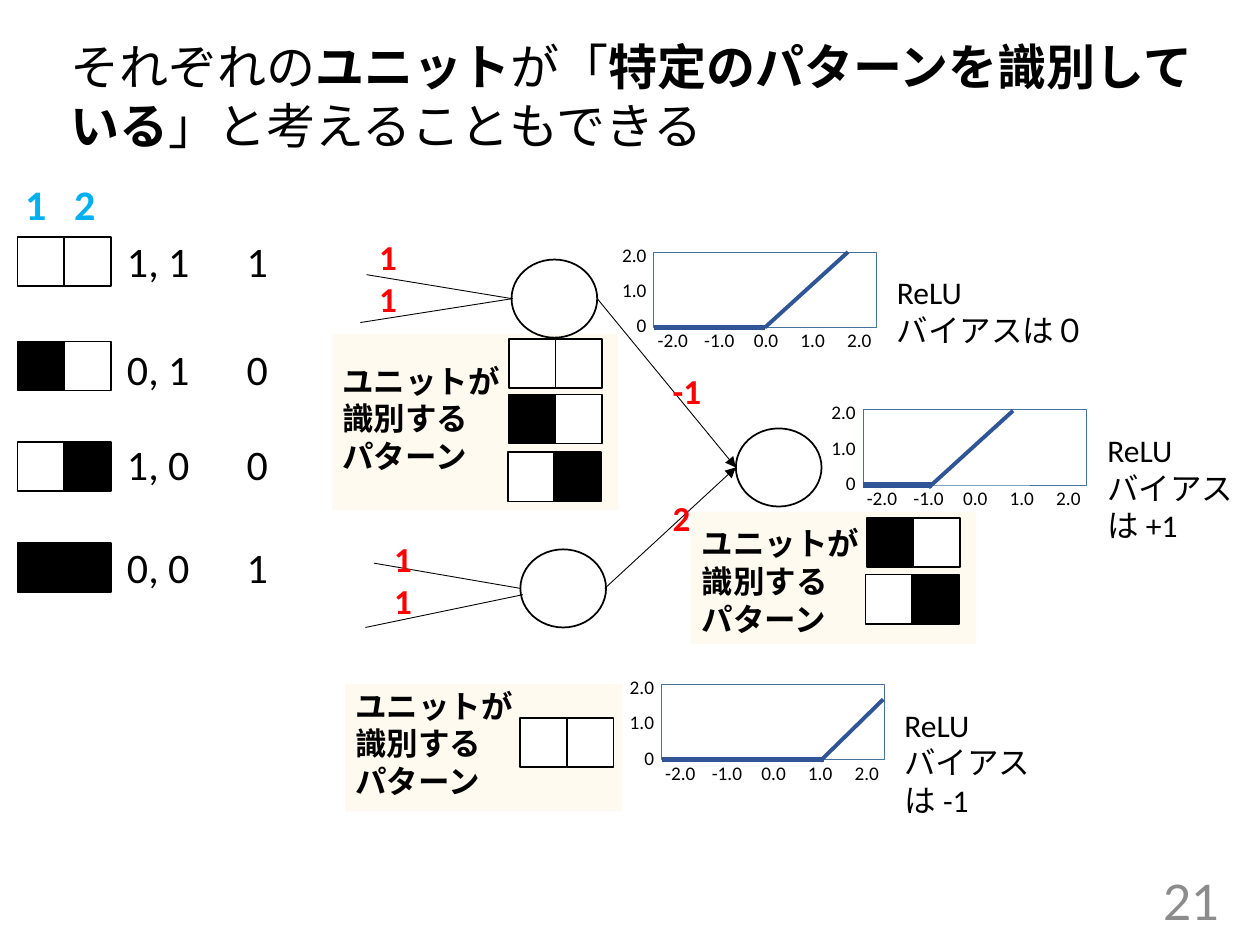
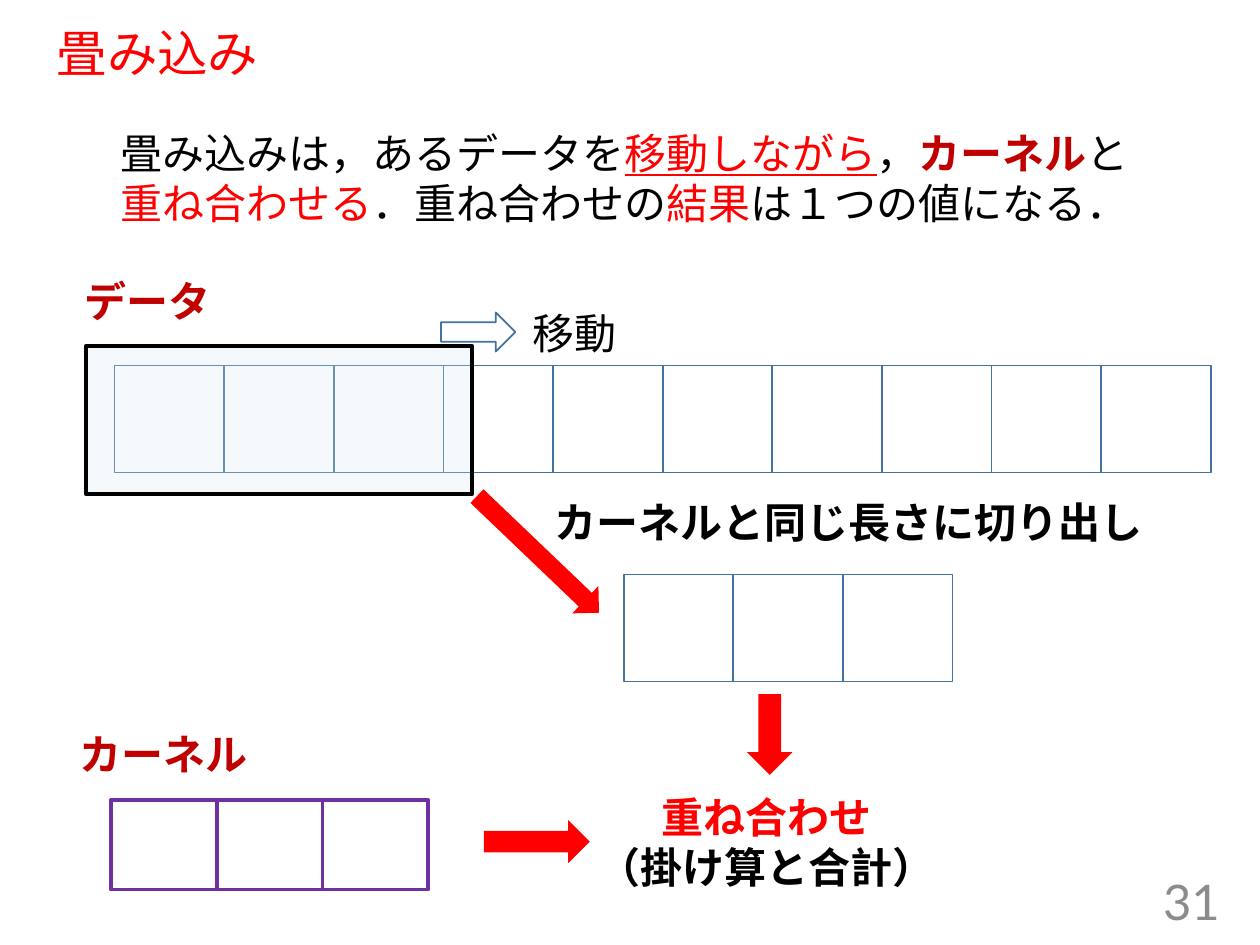
from lxml.etree import SubElement
from pptx import Presentation
from pptx.dml.color import RGBColor
from pptx.enum.shapes import MSO_CONNECTOR, MSO_SHAPE
from pptx.enum.text import MSO_ANCHOR, MSO_AUTO_SIZE, PP_ALIGN
from pptx.oxml.ns import qn
from pptx.util import Inches, Pt

C = {
    "black": "000000", "white": "FFFFFF", "red": "FF0000", "dark_red": "C00000",
    "cyan": "00B0F0", "grey": "8C8C8C", "cream": "FFF2CC", "pale": "DEEBF7",
    "steel": "43739E", "curve": "2F5597", "purple": "7030A0",
}
LEFT, CENTER, RIGHT = PP_ALIGN.LEFT, PP_ALIGN.CENTER, PP_ALIGN.RIGHT


def write(s, lines, box, size=24, color="black", bold=False, font="Calibri",
          align=LEFT, anchor=MSO_ANCHOR.TOP, wrap=False, spacing=None, title=False):
    x, y, w, h = map(Inches, box)
    if title:
        sp = s.shapes.title
        sp.left, sp.top, sp.width, sp.height = x, y, w, h
    else:
        sp = s.shapes.add_textbox(x, y, w, h)
    tf = sp.text_frame
    tf.word_wrap = wrap
    tf.auto_size = MSO_AUTO_SIZE.NONE if wrap else MSO_AUTO_SIZE.SHAPE_TO_FIT_TEXT
    tf.vertical_anchor = anchor
    for i, line in enumerate([lines] if isinstance(lines, str) else lines):
        p = tf.add_paragraph() if i else tf.paragraphs[0]
        p.alignment = align
        p.line_spacing = spacing
        for text, fmt in [(line, {})] if isinstance(line, str) else line:
            r = p.add_run()
            r.text = text
            r.font.name = font
            r.font.size = Pt(size)
            r.font.bold = fmt.get("bold", bold)
            r.font.underline = fmt.get("underline", False)
            r.font.color.rgb = RGBColor.from_string(C[fmt.get("color", color)])


def draw(s, kind, box, fill=None, alpha=None, line=None, width=1, rotation=0):
    sp = s.shapes.add_shape(kind, *map(Inches, box))
    sp.shadow.inherit = False
    sp.rotation = rotation
    if fill:
        sp.fill.solid()
        sp.fill.fore_color.rgb = RGBColor.from_string(C[fill])
    else:
        sp.fill.background()
    if alpha:
        clr = sp._element.spPr.find(qn("a:solidFill"))[0]
        SubElement(clr, qn("a:alpha")).set("val", str(alpha * 1000))
    if line:
        sp.line.color.rgb = RGBColor.from_string(C[line])
        sp.line.width = Pt(width)
    else:
        sp.line.fill.background()


prs = Presentation()
prs.slide_width, prs.slide_height = Inches(10), Inches(7.5)
slides = []
for number in ("21", "31"):
    s = prs.slides.add_slide(prs.slide_layouts[5])
    write(s, number, (7.53, 6.95, 2.25, 0.4), size=28, color="grey", font="Lato",
          align=RIGHT, anchor=MSO_ANCHOR.MIDDLE, wrap=True)
    slides.append(s)

s = slides[0]
bold = {"bold": True}
write(s, [[("それぞれの", {}), ("ユニット", bold), ("が「", {}), ("特定のパターンを識別して", bold)],
          [("いる", bold), ("」と考えることもできる", {})]],
      (0.46, 0.24, 9.23, 1.04), size=28, title=True)

for box in [(5.48, 4.06, 2.27, 1.05), (2.64, 2.65, 2.27, 1.4), (2.74, 5.43, 2.2, 1.01)]:
    draw(s, MSO_SHAPE.RECTANGLE, box, fill="cream", alpha=31)

for x, label in [(0.1, "1"), (0.49, "2")]:
    write(s, label, (x, 1.37, 0.38, 0.5), color="cyan", bold=True)

patterns = [(4.04, 2.69, "11"), (4.04, 3.13, "01"), (4.03, 3.59, "10"),
            (4.13, 5.7, "11"), (6.88, 4.11, "01"), (6.87, 4.56, "10")]
for y, text_y, bits, output in [(1.88, 1.82, "11", "1"), (2.71, 2.68, "01", "0"),
                                (3.51, 3.43, "10", "0"), (4.31, 4.25, "00", "1")]:
    patterns.append((0.14, y, bits))
    write(s, ", ".join(bits), (0.91, text_y, 0.7, 0.5))
    write(s, output, (1.86, text_y, 0.37, 0.5))
for x, y, bits in patterns:
    for i, bit in enumerate(bits):
        draw(s, MSO_SHAPE.RECTANGLE, (x + 0.37 * i, y, 0.37, 0.39),
             fill="white" if bit == "1" else "black", line="black")

for x, y in [(4.06, 2.06), (4.13, 4.36), (5.84, 3.4)]:
    draw(s, MSO_SHAPE.OVAL, (x, y, 0.68, 0.62), line="black")

lines = [((2.91, 2.18), (4.06, 2.37), "black", 0.5, False),
         ((2.86, 2.56), (4.07, 2.37), "black", 0.5, False),
         ((2.97, 4.47), (4.13, 4.67), "black", 0.5, False),
         ((2.9, 4.98), (4.15, 4.72), "black", 0.5, False),
         ((4.74, 2.37), (5.84, 3.71), "black", 0.5, True),
         ((4.8, 4.67), (5.84, 3.71), "black", 0.5, True)]

for x, y, flat_end, rise_start, rise_end in [
        (5.19, 2, 6.07, (6.07, 2.6), (6.73, 2)),
        (6.85, 3.25, 7.4, (7.37, 3.87), (8.04, 3.26)),
        (5.25, 5.43, 6.54, (6.51, 6.04), (7.01, 5.55))]:
    draw(s, MSO_SHAPE.RECTANGLE, (x, y, 1.77, 0.6), fill="white", line="steel", width=0.5)
    for i, label in enumerate(["2.0", "1.0", "0"]):
        write(s, label, (x - 0.36, y - 0.12 + 0.28 * i, 0.4, 0.28), size=11, align=RIGHT, wrap=True)
    for i, label in enumerate(["-2.0", "-1.0", "0.0", "1.0", "2.0"]):
        write(s, label, (x - 0.1 + 0.37 * i, y + 0.56, 0.5, 0.28), size=11, align=CENTER, wrap=True)
    lines += [((x, y + 0.6), (flat_end, y + 0.6), "curve", 3, False),
              (rise_start, rise_end, "curve", 2.25, False)]

for start, end, color, width, arrow in lines:
    cx = s.shapes.add_connector(MSO_CONNECTOR.STRAIGHT, *map(Inches, start + end))
    cx.line.color.rgb = RGBColor.from_string(C[color])
    cx.line.width = Pt(width)
    if arrow:
        SubElement(cx.line._get_or_add_ln(), qn("a:tailEnd")).set("type", "triangle")
    SubElement(cx._element.spPr, qn("a:effectLst"))

for weights, box in [(["1", "1"], (2.91, 1.82, 0.41, 0.78)), (["1", "1"], (3.03, 4.22, 0.41, 0.78)),
                     ("-1", (5.24, 2.88, 0.43, 0.44)), ("2", (5.24, 3.89, 0.36, 0.44))]:
    write(s, weights, box, size=20, color="red", bold=True)
for x, y in [(2.62, 2.82), (2.72, 5.4), (5.47, 4.11)]:
    write(s, ["ユニットが", "識別する", "パターン"], (x, y, 1.46, 1.01), size=18, bold=True)
for note, box in [(["ReLU", "バイアスは０"], (7.02, 2.12, 1.77, 0.71)),
                  (["ReLU", "バイアス", "は +1"], (8.69, 3.37, 1.21, 1.01)),
                  (["ReLU", "バイアス", "は -1"], (7.08, 5.55, 1.21, 1.01))]:
    write(s, note, box, size=18)

s = slides[1]
red = {"color": "red"}
write(s, "畳み込み", (0.35, 0.19, 9.25, 0.51), size=28.8, color="red", font="Lato",
      anchor=MSO_ANCHOR.MIDDLE, wrap=True, spacing=0.9, title=True)
write(s, [[("畳み込みは，あるデータを", {}), ("移動しながら", {"color": "red", "underline": True}),
           ("，", {}), ("カーネル", {"color": "dark_red", "bold": True}), ("と", {})],
          [("重ね合わせる", red), ("．重ね合わせの", {}), ("結果", red), ("は１つの値になる．", {})]],
      (0.86, 0.96, 8.28, 0.91))

for x, y, w, h, count, color, width in [(0.88, 6.35, 0.84, 0.71, 3, "purple", 2.25),
                                        (0.91, 2.9, 0.87, 0.85, 10, "steel", 1),
                                        (4.95, 4.56, 0.87, 0.85, 3, "steel", 1)]:
    for i in range(count):
        draw(s, MSO_SHAPE.RECTANGLE, (x + w * i, y, w, h), line=color, width=width)

draw(s, MSO_SHAPE.RECTANGLE, (0.68, 2.75, 3.07, 1.17), fill="pale", alpha=25, line="black", width=2.25)
draw(s, MSO_SHAPE.RIGHT_ARROW, (3.5, 2.48, 0.59, 0.31), line="steel")
for box, rotation in [((4.12, 3.73, 0.3, 1.34), 313.7), ((5.93, 5.51, 0.36, 0.64), 0),
                      ((4.09, 6.26, 0.34, 0.84), 270)]:
    draw(s, MSO_SHAPE.DOWN_ARROW, box, fill="red", rotation=rotation)

write(s, "移動", (4.13, 2.39, 1.01, 0.5), wrap=True)
write(s, "カーネルと同じ長さに切り出し", (4.3, 3.89, 4.91, 0.5), bold=True)
write(s, [[("重ね合わせ", red)], "（掛け算と合計）"], (4.64, 6.23, 2.89, 0.91), bold=True, align=CENTER)
for label, box in [("データ", (0.57, 2.14, 1.21, 0.5)), ("カーネル", (0.53, 5.73, 1.55, 0.5))]:
    write(s, label, box, color="dark_red", bold=True, font="Noto Sans CJK JP")

prs.save("out.pptx")
